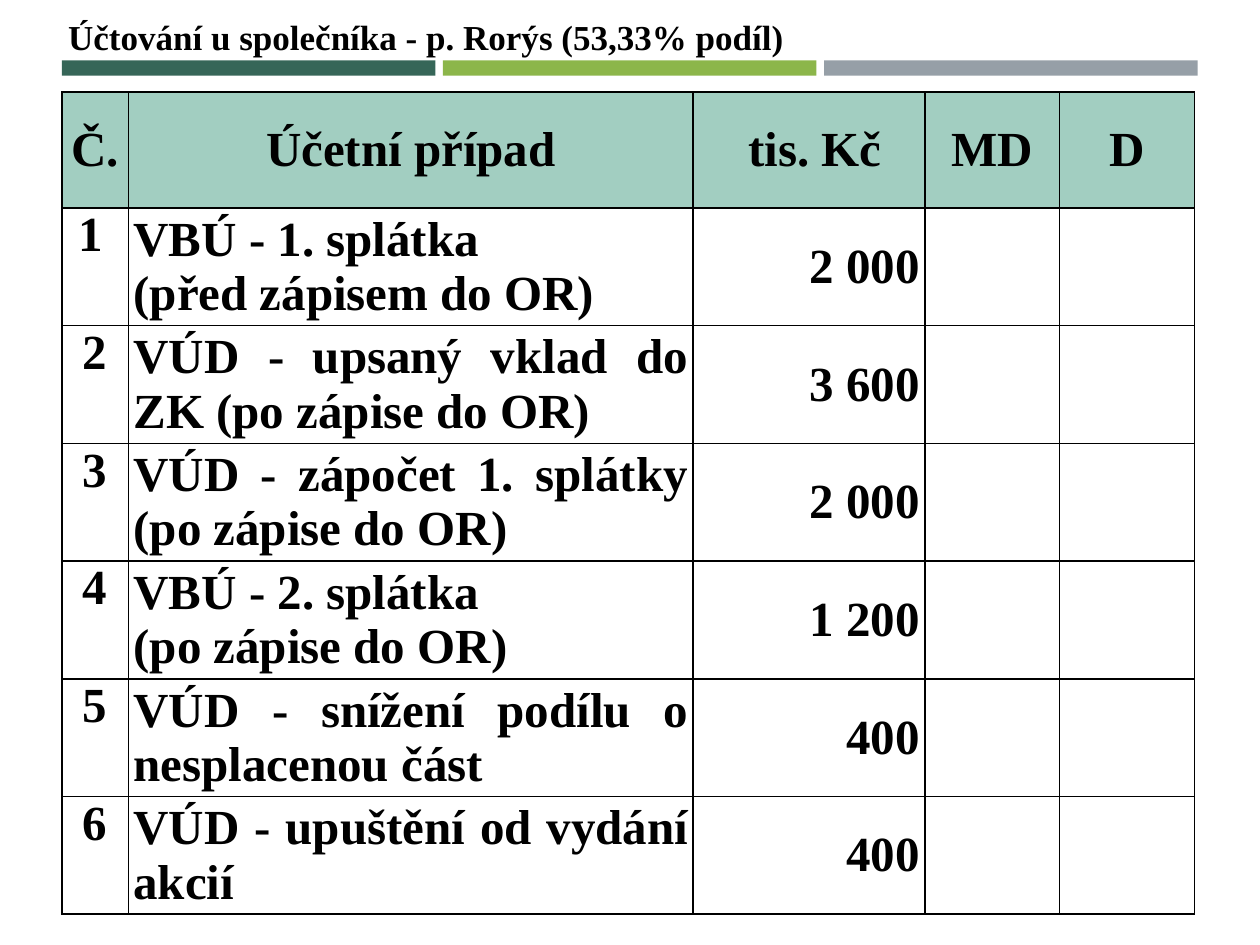
from dataclasses import dataclass

import pptx
import pptx.util
import pptx.dml.color
import pptx.enum.shapes
import pptx.enum.text
import pptx.oxml
import pptx.oxml.ns

Inches, Pt = pptx.util.Inches, pptx.util.Pt
ALIGN = pptx.enum.text.PP_ALIGN
ANCHOR = pptx.enum.text.MSO_ANCHOR

COLORS = {
    "green": "366658",
    "lime": "8CB64A",
    "grey": "969FA7",
    "header": "A2CEC1",
    "text": "000000",
}
FONT = "Times New Roman"
WIDTH, HEIGHT = Inches(10), Inches(7.5)
LEFT = 0.049 * WIDTH
BAR_WIDTH, BAR_PITCH = 0.2965 * WIDTH, 0.3025 * WIDTH
COLUMNS = (0.053, 0.448, 0.184, 0.107, 0.107)
TABLE_TOP, TABLE_HEIGHT, HEADER_HEIGHT = (
    0.0973 * HEIGHT, 0.8693 * HEIGHT, 0.1227 * HEIGHT)


@dataclass
class Entry:
    number: str
    lines: tuple[str, ...]
    amount: str
    number_align: ALIGN = ALIGN.CENTER


HEADERS = ("Č.", "Účetní případ", " tis. Kč", "MD", "D")
ENTRIES = (
    Entry(" 1", ("VBÚ - 1. splátka", "(před zápisem do OR)"), "2 000", ALIGN.LEFT),
    Entry("2", ("VÚD - upsaný vklad do ZK (po zápise do OR)",), "3 600"),
    Entry("3", ("VÚD - zápočet 1. splátky (po zápise do OR)",), "2 000"),
    Entry("4", ("VBÚ - 2. splátka", "(po zápise do OR)"), "1 200"),
    Entry("5", ("VÚD - snížení podílu o nesplacenou část",), "400"),
    Entry("6", ("VÚD - upuštění od vydání akcií",), "400"),
)


def rgb(name: str) -> pptx.dml.color.RGBColor:
    return pptx.dml.color.RGBColor.from_string(COLORS[name])


def write(tf, lines: tuple[str, ...], size: int, align: ALIGN) -> None:
    for i, line in enumerate(lines):
        p = tf.paragraphs[0] if i == 0 else tf.add_paragraph()
        p.alignment = align
        r = p.add_run()
        r.text = line
        r.font.name = FONT
        r.font.size = Pt(size)
        r.font.bold = True
        r.font.color.rgb = rgb("text")


def add_bar(s, column: int, color: str) -> None:
    sp = s.shapes.add_shape(
        pptx.enum.shapes.MSO_SHAPE.RECTANGLE, int(LEFT + column * BAR_PITCH),
        int(0.064 * HEIGHT), int(BAR_WIDTH), int(0.016 * HEIGHT))
    sp.shadow.inherit = False
    sp.fill.solid()
    sp.fill.fore_color.rgb = rgb(color)
    sp.line.fill.background()


def format_title(s, text: str) -> None:
    sp = s.shapes.title
    sp.left, sp.top = int(0.044 * WIDTH), int(0.0093 * HEIGHT)
    sp.width, sp.height = int(0.592 * WIDTH), int(0.0587 * HEIGHT)
    tf = sp.text_frame
    tf.word_wrap = False
    tf.auto_size = pptx.enum.text.MSO_AUTO_SIZE.SHAPE_TO_FIT_TEXT
    tf.vertical_anchor = ANCHOR.TOP
    write(tf, (text,), 20, ALIGN.LEFT)


def add_borders(cell) -> None:
    tcPr = cell._tc.get_or_add_tcPr()
    for side in ("lnL", "lnR", "lnT", "lnB"):
        tcPr.append(pptx.oxml.parse_xml(
            f'<a:{side} {pptx.oxml.ns.nsdecls("a")} w="{Pt(1)}"><a:solidFill>'
            f'<a:srgbClr val="{COLORS["text"]}"/></a:solidFill></a:{side}>'))


def fill_cell(cell, lines: tuple[str, ...], align: ALIGN, anchor: ANCHOR) -> None:
    cell.margin_left = cell.margin_right = Inches(0.04)
    cell.margin_top = cell.margin_bottom = 0
    cell.vertical_anchor = anchor
    write(cell.text_frame, lines, 28, align)


def add_entries(s) -> None:
    table = s.shapes.add_table(
        len(ENTRIES) + 1, len(COLUMNS), int(LEFT), int(TABLE_TOP),
        int(sum(COLUMNS) * WIDTH), int(TABLE_HEIGHT)).table
    table.first_row = table.horz_banding = False
    for column, share in zip(table.columns, COLUMNS):
        column.width = int(share * WIDTH)
    for i, row in enumerate(table.rows):
        row.height = int((TABLE_HEIGHT - HEADER_HEIGHT) / len(ENTRIES) if i else HEADER_HEIGHT)
        for cell in row.cells:
            add_borders(cell)
            if i:
                cell.fill.background()
            else:
                cell.fill.solid()
                cell.fill.fore_color.rgb = rgb("header")
    for j, header in enumerate(HEADERS):
        fill_cell(table.cell(0, j), (header,), ALIGN.CENTER, ANCHOR.MIDDLE)
    for i, entry in enumerate(ENTRIES, 1):
        fill_cell(table.cell(i, 0), (entry.number,), entry.number_align, ANCHOR.TOP)
        fill_cell(table.cell(i, 1), entry.lines, ALIGN.JUSTIFY, ANCHOR.MIDDLE)
        fill_cell(table.cell(i, 2), (entry.amount,), ALIGN.RIGHT, ANCHOR.MIDDLE)


def main() -> None:
    prs = pptx.Presentation()
    prs.slide_width, prs.slide_height = WIDTH, HEIGHT
    s = prs.slides.add_slide(prs.slide_layouts[5])
    format_title(s, "Účtování u společníka - p. Rorýs (53,33% podíl)")
    for column, color in enumerate(("green", "lime", "grey")):
        add_bar(s, column, color)
    add_entries(s)
    prs.save("out.pptx")


if __name__ == "__main__":
    main()
